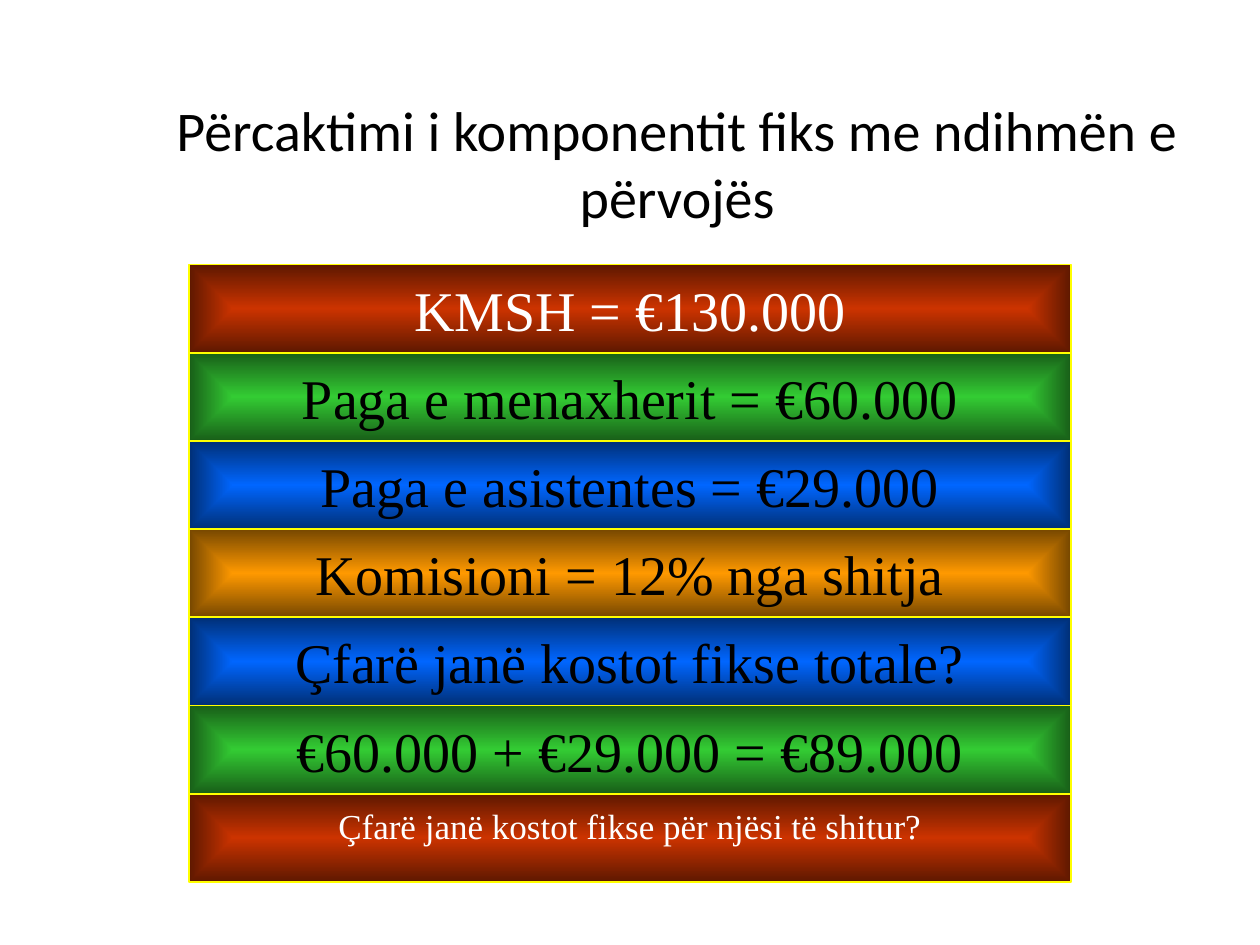
from lxml import etree
from pptx import Presentation
from pptx.dml.color import RGBColor
from pptx.enum import shapes, text
from pptx.oxml import ns
from pptx.util import Pt

BLACK = RGBColor(0x00, 0x00, 0x00)
WHITE = RGBColor(0xFF, 0xFF, 0xFF)
YELLOW = RGBColor(0xFF, 0xFF, 0x00)
# Each pair runs from the centre to the edge of a bar
RED = RGBColor(0xCC, 0x33, 0x00), RGBColor(0x5E, 0x18, 0x00)
GREEN = RGBColor(0x33, 0xCC, 0x33), RGBColor(0x18, 0x5E, 0x18)
BLUE = RGBColor(0x00, 0x66, 0xFF), RGBColor(0x00, 0x2F, 0x76)
ORANGE = RGBColor(0xFF, 0x99, 0x00), RGBColor(0x76, 0x47, 0x00)

# Wording, fill, text colour
ROWS = [
    ("KMSH = €130.000", RED, WHITE),
    ("Paga e menaxherit = €60.000", GREEN, BLACK),
    ("Paga e asistentes = €29.000", BLUE, BLACK),
    ("Komisioni = 12% nga shitja", ORANGE, BLACK),
    ("Çfarë janë kostot fikse totale?", BLUE, BLACK),
    ("€60.000 + €29.000 = €89.000", GREEN, BLACK),
]
LAST = "Çfarë janë kostot fikse për njësi të shitur?"


def write(frame, words, font, size, color):
    para = frame.paragraphs[0]
    para.alignment = text.PP_ALIGN.CENTER
    run = para.add_run()
    run.text = words
    run.font.name = font
    run.font.size = Pt(size)
    run.font.color.rgb = color


def shade(shape, colors):
    """Fill a shape with a gradient that follows its outline."""
    shape.fill.gradient()
    stops = shape.fill.gradient_stops
    for stop, color, place in zip(stops, colors, (0, 1)):
        stop.color.rgb = color
        stop.position = place
    grad = shape.element.spPr.find(ns.qn("a:gradFill"))
    grad.remove(grad.find(ns.qn("a:lin")))
    way = etree.SubElement(grad, ns.qn("a:path"), {"path": "shape"})
    sides = dict.fromkeys("ltrb", "50000")
    etree.SubElement(way, ns.qn("a:fillToRect"), sides)


def add_title(slide, left, top, width, height):
    box = slide.shapes.add_textbox(Pt(left), Pt(top), Pt(width), Pt(height))
    frame = box.text_frame
    frame.word_wrap = True
    frame.vertical_anchor = text.MSO_ANCHOR.MIDDLE
    write(frame, "Përcaktimi i komponentit fiks me ndihmën e përvojës",
          "Calibri", 32, BLACK)


def add_bar(slide, left, top, width, height, words, fill, color, size=32):
    bar = slide.shapes.add_shape(shapes.MSO_SHAPE.RECTANGLE,
                                 Pt(left), Pt(top), Pt(width), Pt(height))
    bar.shadow.inherit = False
    shade(bar, fill)
    bar.line.color.rgb = YELLOW
    bar.line.width = Pt(1)
    frame = bar.text_frame
    frame.word_wrap = False
    frame.vertical_anchor = text.MSO_ANCHOR.MIDDLE
    write(frame, words, "Times New Roman", size, color)
    return bar


def add_stack(slide, left, top, width, height):
    step = height / (len(ROWS) + 1)
    for i, row in enumerate(ROWS):
        add_bar(slide, left, top + i * step, width, step, *row)
    # The closing question is smaller and sits high in its bar
    end = add_bar(slide, left, top + height - step, width, step,
                  LAST, RED, WHITE, 20)
    end.text_frame.vertical_anchor = text.MSO_ANCHOR.TOP
    end.text_frame.margin_top = Pt(6)


def main():
    deck = Presentation()
    deck.slide_width, deck.slide_height = Pt(720), Pt(540)
    slide = deck.slides.add_slide(deck.slide_layouts[6])
    add_stack(slide, 108, 151.2, 504, 352.8)
    add_title(slide, 81, 48, 612, 90)
    deck.save("out.pptx")


if __name__ == "__main__":
    main()
